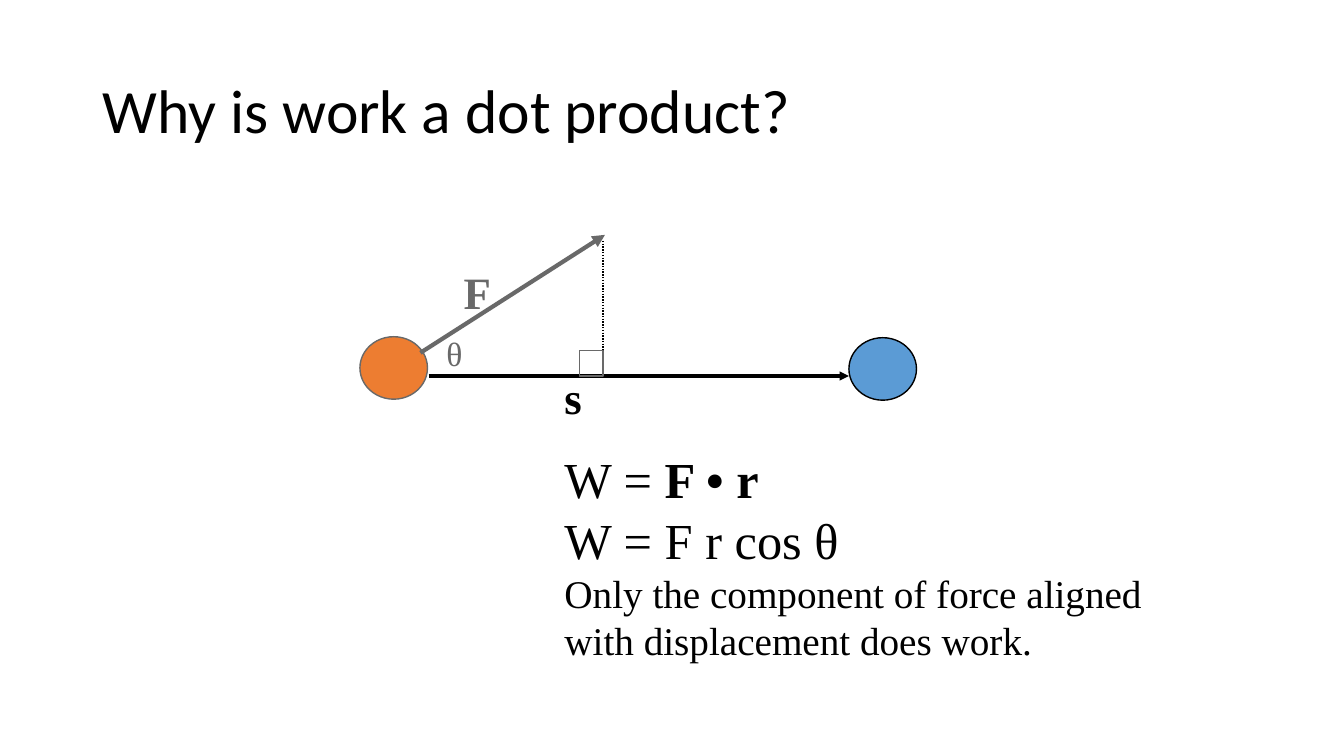
import pptx
import pptx.dml.color
import pptx.enum.dml
import pptx.enum.shapes
import pptx.enum.text
import pptx.oxml
import pptx.oxml.ns
import pptx.util

Inches = pptx.util.Inches
Pt = pptx.util.Pt
SHAPES = pptx.enum.shapes.MSO_SHAPE

COLORS = {
    "black": "000000",
    "gray": "696969",
    "orange": "ED7D31",
    "blue": "5B9BD5",
}
SERIF = "Times New Roman"


def rgb(name):
    return pptx.dml.color.RGBColor.from_string(COLORS[name])


def add_text_box(slide, left, top, width, height, wrap=True):
    shape = slide.shapes.add_textbox(Inches(left), Inches(top), Inches(width), Inches(height))
    shape.text_frame.word_wrap = wrap
    return shape.text_frame


def set_font(paragraph, name, size, color, bold=None):
    font = paragraph.font
    font.name = name
    font.size = Pt(size)
    font.color.rgb = rgb(color)
    font.bold = bold


def add_label(slide, text, left, top, width, height, size, color, bold):
    frame = add_text_box(slide, left, top, width, height, wrap=False)
    frame.auto_size = pptx.enum.text.MSO_AUTO_SIZE.SHAPE_TO_FIT_TEXT
    paragraph = frame.paragraphs[0]
    paragraph.text = text
    set_font(paragraph, SERIF, size, color, bold)


def add_outlined_shape(slide, kind, left, top, width, height, line, fill=None):
    shape = slide.shapes.add_shape(kind, Inches(left), Inches(top), Inches(width), Inches(height))
    shape.shadow.inherit = False
    if fill:
        shape.fill.solid()
        shape.fill.fore_color.rgb = rgb(fill)
    else:
        shape.fill.background()
    shape.line.color.rgb = rgb(line)
    shape.line.width = Pt(1)


def add_line(slide, start, end, color, width, arrow=False, dash=None):
    connector = slide.shapes.add_connector(
        pptx.enum.shapes.MSO_CONNECTOR.STRAIGHT, *map(Inches, start + end))
    connector.line.color.rgb = rgb(color)
    connector.line.width = Pt(width)
    if dash:
        connector.line.dash_style = dash
    if arrow:
        tail = pptx.oxml.parse_xml(
            f'<a:tailEnd {pptx.oxml.ns.nsdecls("a")} type="triangle"/>')
        connector.line._get_or_add_ln().append(tail)
    connector._element.spPr.append(
        pptx.oxml.parse_xml(f'<a:effectLst {pptx.oxml.ns.nsdecls("a")}/>'))


def add_title(slide, left, top, width, height):
    frame = add_text_box(slide, left, top, width, height)
    frame.vertical_anchor = pptx.enum.text.MSO_ANCHOR.MIDDLE
    paragraph = frame.paragraphs[0]
    paragraph.text = "Why is work a dot product?"
    paragraph.line_spacing = 0.9
    set_font(paragraph, "Calibri", 44, "black")


def add_force_diagram(slide, left, top, width):
    ball_width, ball_height = 0.67, 0.62
    axis = top + 1.4
    target = left + width - ball_width
    foot = left + 2.41
    corner_width, corner_height = 0.23, 0.25

    add_outlined_shape(slide, SHAPES.OVAL, left, top + 1.01,
                       ball_width, ball_height, "gray", "orange")
    add_outlined_shape(slide, SHAPES.OVAL, target, top + 1.02,
                       ball_width, ball_height, "black", "blue")
    add_line(slide, (left + 0.68, axis), (target, axis), "black", 2.25, arrow=True)
    add_label(slide, "s", left + 1.93, axis - 0.11, 0.38, 0.63, 32, "black", True)
    add_line(slide, (left + 0.6, top + 1.17), (left + 2.43, top), "gray", 3, arrow=True)
    add_label(slide, "F", left + 0.93, top + 0.25, 0.47, 0.63, 32, "gray", True)
    add_line(slide, (foot, top + 0.06), (foot, axis), "black", 1,
             dash=pptx.enum.dml.MSO_LINE.ROUND_DOT)
    add_label(slide, "θ", left + 0.76, top + 0.92, 0.38, 0.5, 24, "gray", False)
    add_outlined_shape(slide, SHAPES.RECTANGLE, foot - corner_width, axis - corner_height,
                       corner_width, corner_height, "gray")


def add_equations(slide, left, top, width, height):
    frame = add_text_box(slide, left, top, width, height)
    frame.auto_size = pptx.enum.text.MSO_AUTO_SIZE.SHAPE_TO_FIT_TEXT
    lines = [
        ("W = ", "F • r", 36),
        ("W = F r cos θ", "", 36),
        ("Only the component of force aligned with displacement does work.", "", 28),
    ]
    for index, (text, vectors, size) in enumerate(lines):
        paragraph = frame.add_paragraph() if index else frame.paragraphs[0]
        set_font(paragraph, SERIF, size, "black")
        paragraph.add_run().text = text
        if vectors:
            run = paragraph.add_run()
            run.text = vectors
            run.font.bold = True


def main():
    presentation = pptx.Presentation()
    presentation.slide_width = Inches(13.33)
    presentation.slide_height = Inches(7.5)
    slide = presentation.slides.add_slide(presentation.slide_layouts[6])
    add_title(slide, 0.92, 0.4, 11.5, 1.45)
    add_force_diagram(slide, 3.57, 2.33, 5.52)
    add_equations(slide, 5.5, 4.4, 6.17, 2.24)
    presentation.save("out.pptx")


if __name__ == "__main__":
    main()
